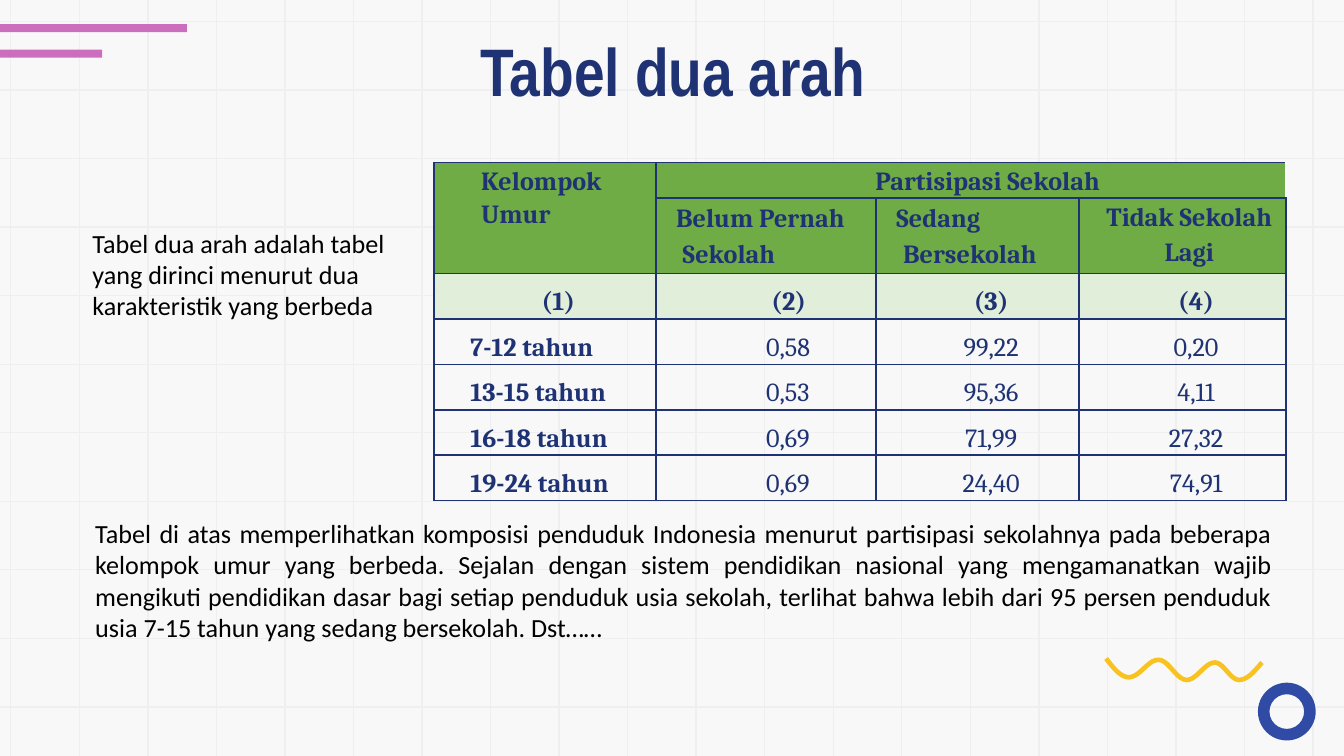
"""Build a slide that explains a two-way table of school participation by age group."""
from math import cos, pi

from lxml import etree
from pptx import Presentation
from pptx.dml.color import RGBColor
from pptx.enum.shapes import MSO_CONNECTOR, MSO_SHAPE
from pptx.enum.text import PP_ALIGN
from pptx.oxml.ns import qn
from pptx.util import Inches, Pt

LEFT, CENTER, JUSTIFY = PP_ALIGN.LEFT, PP_ALIGN.CENTER, PP_ALIGN.JUSTIFY
STRAIGHT = MSO_CONNECTOR.STRAIGHT
RECTANGLE, DONUT = MSO_SHAPE.RECTANGLE, MSO_SHAPE.DONUT

PAPER = RGBColor(0xF8, 0xF8, 0xF8)
GRID = RGBColor(0xEF, 0xEF, 0xEF)
PINK = RGBColor(0xCB, 0x6E, 0xBE)
BLUE = RGBColor(0x30, 0x4B, 0xA6)
YELLOW = RGBColor(0xF8, 0xC2, 0x20)
NAVY = RGBColor(0x1F, 0x33, 0x74)
BLACK = RGBColor(0, 0, 0)
GREEN = RGBColor(0x6F, 0xAC, 0x46)
PALE_GREEN = RGBColor(0xE1, 0xEE, 0xD9)

WIDTH = 10
HEIGHT = WIDTH * 9 / 16
GRID_STEP = 0.51

TITLE = "Tabel dua arah"
DEFINITION = "Tabel dua arah adalah tabel yang dirinci menurut dua karakteristik yang berbeda"
EXPLANATION = (
    "Tabel di atas memperlihatkan komposisi penduduk Indonesia menurut partisipasi "
    "sekolahnya pada beberapa kelompok umur yang berbeda. Sejalan dengan sistem "
    "pendidikan nasional yang mengamanatkan wajib mengikuti pendidikan dasar bagi setiap "
    "penduduk usia sekolah, terlihat bahwa lebih dari 95 persen penduduk usia 7-15 tahun "
    "yang sedang bersekolah. Dst……"
)

COLUMN_WIDTHS = [1.65, 1.64, 1.51, 1.54]
ROW_HEIGHTS = [0.23, 0.47] + [0.31] * 5
HEADER_CELLS = [
    (0, 0, "Kelompok Umur", LEFT, 0.35, 0, 1.13),
    (0, 1, "Partisipasi Sekolah", CENTER, 0.25, 0, 1.13),
    (1, 1, "Belum Pernah Sekolah", LEFT, 0.2, -0.05, 1.2),
    (1, 2, "Sedang Bersekolah", LEFT, 0.2, -0.05, 1.2),
    (1, 3, "Tidak Sekolah Lagi", CENTER, 0.1, 0, 1.17),
]
NUMBER_ROW = ["(1)", "(2)", "(3)", "(4)"]
DATA_ROWS = [
    ["7-12 tahun", "0,58", "99,22", "0,20"],
    ["13-15 tahun", "0,53", "95,36", "4,11"],
    ["16-18 tahun", "0,69", "71,99", "27,32"],
    ["19-24 tahun", "0,69", "24,40", "74,91"],
]
NUMBER_LAYOUT = [(CENTER, 0.2), (LEFT, 0.86), (CENTER, 0.2), (CENTER, 0.2)]
DATA_LAYOUT = [(LEFT, 0.27), (LEFT, 0.82), (CENTER, 0.2), (CENTER, 0.2)]

STRIPES = [(0.18, 1.39), (0.37, 0.76)]
WAVE_TURNS = [(8.23, 4.9), (8.4, 5.04), (8.62, 4.91), (8.83, 5.06),
              (9.04, 4.93), (9.22, 5.06), (9.39, 4.93)]
WAVE_STEPS = 10


def add_grid_line(slide, x1, y1, x2, y2):
    line = slide.shapes.add_connector(
        STRAIGHT, Inches(x1), Inches(y1), Inches(x2), Inches(y2))
    line.line.color.rgb = GRID
    line.line.width = Pt(0.75)
    etree.SubElement(line._element.spPr, qn("a:effectLst"))


def add_filled_shape(slide, kind, left, top, width, height, color):
    shape = slide.shapes.add_shape(
        kind, Inches(left), Inches(top), Inches(width), Inches(height))
    shape.shadow.inherit = False
    shape.fill.solid()
    shape.fill.fore_color.rgb = color
    shape.line.fill.background()
    return shape


def add_wave(slide):
    points = [WAVE_TURNS[0]]
    last = len(WAVE_TURNS) - 2
    for index, ((x1, y1), (x2, y2)) in enumerate(zip(WAVE_TURNS, WAVE_TURNS[1:])):
        start = pi / 2 if index == 0 else 0
        end = pi / 2 if index == last else pi
        for step in range(1, WAVE_STEPS + 1):
            part = step / WAVE_STEPS
            phase = start + (end - start) * part
            rise = (cos(start) - cos(phase)) / (cos(start) - cos(end))
            points.append((x1 + (x2 - x1) * part, y1 + (y2 - y1) * rise))
    corners = [(Inches(x), Inches(y)) for x, y in points]
    builder = slide.shapes.build_freeform(*corners[0])
    builder.add_line_segments(corners[1:], close=False)
    wave = builder.convert_to_shape()
    wave.shadow.inherit = False
    wave.fill.background()
    wave.line.color.rgb = YELLOW
    wave.line.width = Pt(2.5)


def format_paragraph(paragraph, font_name, size, color, bold, align, margin=0, indent=0):
    paragraph.alignment = align
    properties = paragraph._p.get_or_add_pPr()
    properties.set("marL", str(Inches(margin)))
    properties.set("indent", str(Inches(indent)))
    font = paragraph.runs[0].font
    font.name, font.size, font.bold = font_name, Pt(size), bold
    font.color.rgb = color


def add_text(slide, box, text, inset, *style):
    frame = slide.shapes.add_textbox(*map(Inches, box)).text_frame
    frame.word_wrap = True
    frame.margin_top = frame.margin_bottom = Inches(inset)
    frame.text = text
    format_paragraph(frame.paragraphs[0], *style)


def set_borders(cell, sides):
    properties = cell._tc.get_or_add_tcPr()
    for side in sides:
        border = etree.SubElement(properties, qn("a:ln" + side), w=str(Pt(1)))
        fill = etree.SubElement(border, qn("a:solidFill"))
        etree.SubElement(fill, qn("a:srgbClr"), val=str(NAVY))


def fill_cell(cell, text, bold, align, margin, indent=0, spacing=1.15):
    cell.text_frame.text = text
    paragraph = cell.text_frame.paragraphs[0]
    paragraph.line_spacing = spacing
    format_paragraph(paragraph, "Cambria", 14, NAVY, bold, align, margin, indent)


def add_participation_table(slide):
    table = slide.shapes.add_table(
        len(ROW_HEIGHTS), len(COLUMN_WIDTHS), Inches(3.23), Inches(1.21),
        Inches(sum(COLUMN_WIDTHS)), Inches(sum(ROW_HEIGHTS))).table
    table.first_row = table.horz_banding = False
    for column, width in zip(table.columns, COLUMN_WIDTHS):
        column.width = Inches(width)
    for row_index, height in enumerate(ROW_HEIGHTS):
        table.rows[row_index].height = Inches(height)
        for column_index in range(len(COLUMN_WIDTHS)):
            cell = table.cell(row_index, column_index)
            cell.margin_left = cell.margin_right = cell.margin_bottom = 0
            cell.margin_top = Inches(0.07 if row_index > 1 else 0)
            open_sides = ["LRTB", "LTB", "TB", "TB"]
            set_borders(cell, open_sides[column_index] if row_index == 0 else "LRTB")
            if row_index > 2:
                cell.fill.background()
            else:
                cell.fill.solid()
                cell.fill.fore_color.rgb = PALE_GREEN if row_index == 2 else GREEN
    table.cell(0, 0).merge(table.cell(1, 0))
    table.cell(0, 1).merge(table.cell(0, 3))
    for row, column, text, *layout in HEADER_CELLS:
        fill_cell(table.cell(row, column), text, True, *layout)
    for row, texts in enumerate([NUMBER_ROW] + DATA_ROWS, start=2):
        layouts = NUMBER_LAYOUT if row == 2 else DATA_LAYOUT
        for column, (text, layout) in enumerate(zip(texts, layouts)):
            fill_cell(table.cell(row, column), text, row == 2 or column == 0, *layout)


def main():
    presentation = Presentation()
    presentation.slide_width, presentation.slide_height = Inches(WIDTH), Inches(HEIGHT)
    slide = presentation.slides.add_slide(presentation.slide_layouts[6])
    slide.background.fill.solid()
    slide.background.fill.fore_color.rgb = PAPER

    for index in range(11):
        y = 0.16 + index * GRID_STEP
        add_grid_line(slide, 0, y, WIDTH, y)
    for index in range(20):
        x = 0.08 + index * GRID_STEP
        add_grid_line(slide, x, 0, x, HEIGHT)
    for top, width in STRIPES:
        add_filled_shape(slide, RECTANGLE, 0, top, width, 0.06, PINK)
    ring = add_filled_shape(slide, DONUT, 9.36, 5.08, 0.43, 0.43, BLUE)
    ring.adjustments[0] = 0.2
    add_wave(slide)

    add_text(slide, (0.79, 0.12, 8.43, 0.63), TITLE, 0.1,
             "Arial Narrow", 36, NAVY, True, CENTER)
    add_text(slide, (0.59, 1.64, 2.76, 0.81), DEFINITION, 0.05,
             "Calibri", 14, BLACK, False, LEFT)
    add_participation_table(slide)
    add_text(slide, (0.6, 3.8, 8.97, 1.04), EXPLANATION, 0.05,
             "Calibri", 14, BLACK, False, JUSTIFY, 0.01)
    presentation.save("out.pptx")


if __name__ == "__main__":
    main()
